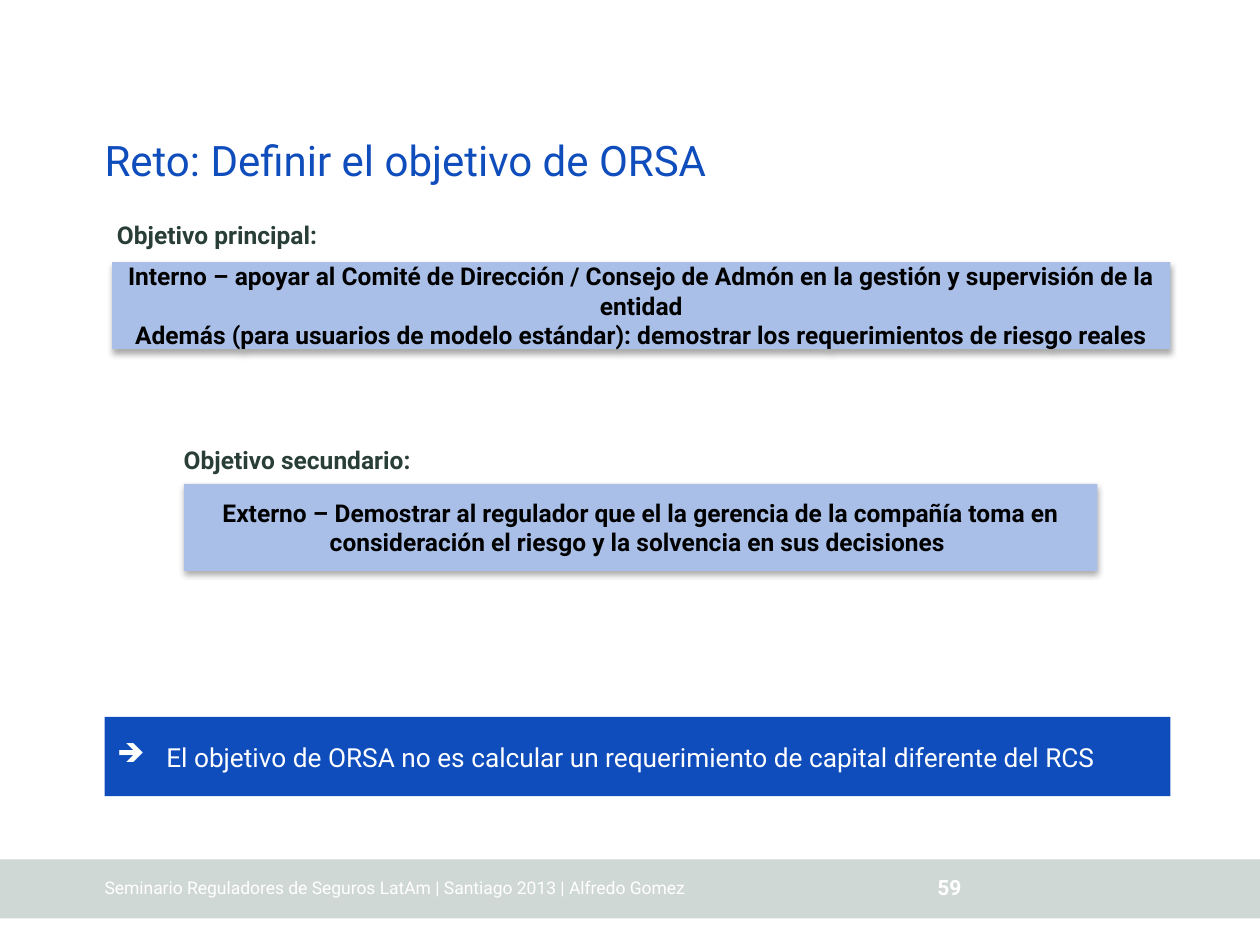
import lxml.etree
import pptx
import pptx.dml.color
import pptx.enum.shapes
import pptx.enum.text
import pptx.oxml
import pptx.oxml.ns
import pptx.util

Inches = pptx.util.Inches
Pt = pptx.util.Pt
ALIGN = pptx.enum.text.PP_ALIGN
ANCHOR = pptx.enum.text.MSO_ANCHOR

COLORS = {
    "blue": "0F4DBC",
    "light_blue": "A9BFE7",
    "footer": "D0D8D6",
    "label": "283E36",
    "black": "000000",
    "white": "FFFFFF",
}


def rgb(color):
    return pptx.dml.color.RGBColor.from_string(COLORS[color])


def write_text(frame, text, size=14, color="black", bold=False, align=ALIGN.LEFT,
               anchor=ANCHOR.TOP, inset=True, after=0, bullet=None):
    frame.word_wrap = True
    frame.vertical_anchor = anchor
    if not inset:
        frame.margin_left = frame.margin_right = 0
        frame.margin_top = frame.margin_bottom = 0
    for index, line in enumerate(text.split("\n")):
        paragraph = frame.add_paragraph() if index else frame.paragraphs[0]
        paragraph.alignment = align
        paragraph.space_after = Pt(after)
        if bullet:
            properties = paragraph._p.get_or_add_pPr()
            properties.set("marL", str(Inches(0.49)))
            properties.set("indent", str(Inches(-0.39)))
            mark = lxml.etree.SubElement(properties, pptx.oxml.ns.qn("a:buChar"))
            mark.set("char", bullet)
        run = paragraph.add_run()
        run.text = line
        run.font.name = "Roboto"
        run.font.size = Pt(size)
        run.font.bold = bold
        run.font.color.rgb = rgb(color)


class SlideBuilder:
    def __init__(self, slide):
        self.slide = slide

    def text(self, box, text, **style):
        textbox = self.slide.shapes.add_textbox(*map(Inches, box))
        write_text(textbox.text_frame, text, **style)

    def panel(self, box, fill, text="", **style):
        panel = self.slide.shapes.add_shape(
            pptx.enum.shapes.MSO_SHAPE.RECTANGLE, *map(Inches, box))
        panel.shadow.inherit = False
        panel.fill.solid()
        panel.fill.fore_color.rgb = rgb(fill)
        panel.line.fill.background()
        if text:
            write_text(panel.text_frame, text, anchor=ANCHOR.MIDDLE, **style)
        return panel

    def objective(self, label_box, label, panel_box, statement):
        self.text(label_box, label, color="label", bold=True, after=6)
        panel = self.panel(panel_box, "light_blue", statement, bold=True,
                           align=ALIGN.CENTER)
        effects = panel._element.spPr.find(pptx.oxml.ns.qn("a:effectLst"))
        effects.append(pptx.oxml.parse_xml(
            f'<a:outerShdw {pptx.oxml.ns.nsdecls("a")} blurRad="{Pt(3.5)}" '
            f'dist="{Pt(2.2)}" dir="5400000" algn="t" rotWithShape="0">'
            f'<a:srgbClr val="{COLORS["black"]}"><a:alpha val="32000"/></a:srgbClr>'
            '</a:outerShdw>'))


def main():
    presentation = pptx.Presentation()
    presentation.slide_width = Inches(10)
    presentation.slide_height = Inches(7.5)
    builder = SlideBuilder(
        presentation.slides.add_slide(presentation.slide_layouts[6]))

    builder.panel((0, 6.82, 10, 0.47), "footer")
    builder.text((0.83, 6.98, 6.46, 0.15),
                 "Seminario Reguladores de Seguros LatAm | Santiago 2013 | Alfredo Gomez",
                 size=10, color="white", anchor=ANCHOR.BOTTOM, inset=False)
    builder.text((7.44, 6.94, 0.3, 0.2), "59", size=12, color="white", bold=True,
                 anchor=ANCHOR.BOTTOM, inset=False)

    builder.text((0.83, 0.52, 7.56, 0.95), "Reto: Definir el objetivo de ORSA",
                 size=24, color="blue", anchor=ANCHOR.BOTTOM, inset=False)
    builder.objective(
        (0.83, 1.7, 4.26, 0.34), "Objetivo principal:", (0.89, 2.08, 8.4, 0.69),
        "Interno – apoyar al Comité de Dirección / Consejo de Admón en la gestión "
        "y supervisión de la entidad\n"
        "Además (para usuarios de modelo estándar): demostrar los requerimientos "
        "de riesgo reales")
    builder.objective(
        (1.36, 3.48, 4.26, 0.34), "Objetivo secundario:", (1.46, 3.84, 7.25, 0.69),
        "Externo – Demostrar al regulador que el la gerencia de la compañía toma en "
        "consideración el riesgo y la solvencia en sus decisiones ")
    builder.panel(
        (0.83, 5.69, 8.46, 0.63), "blue",
        "El objetivo de ORSA no es calcular un requerimiento de capital diferente del RCS",
        size=15, color="white", inset=False, bullet="➔")

    presentation.save("out.pptx")


if __name__ == "__main__":
    main()
